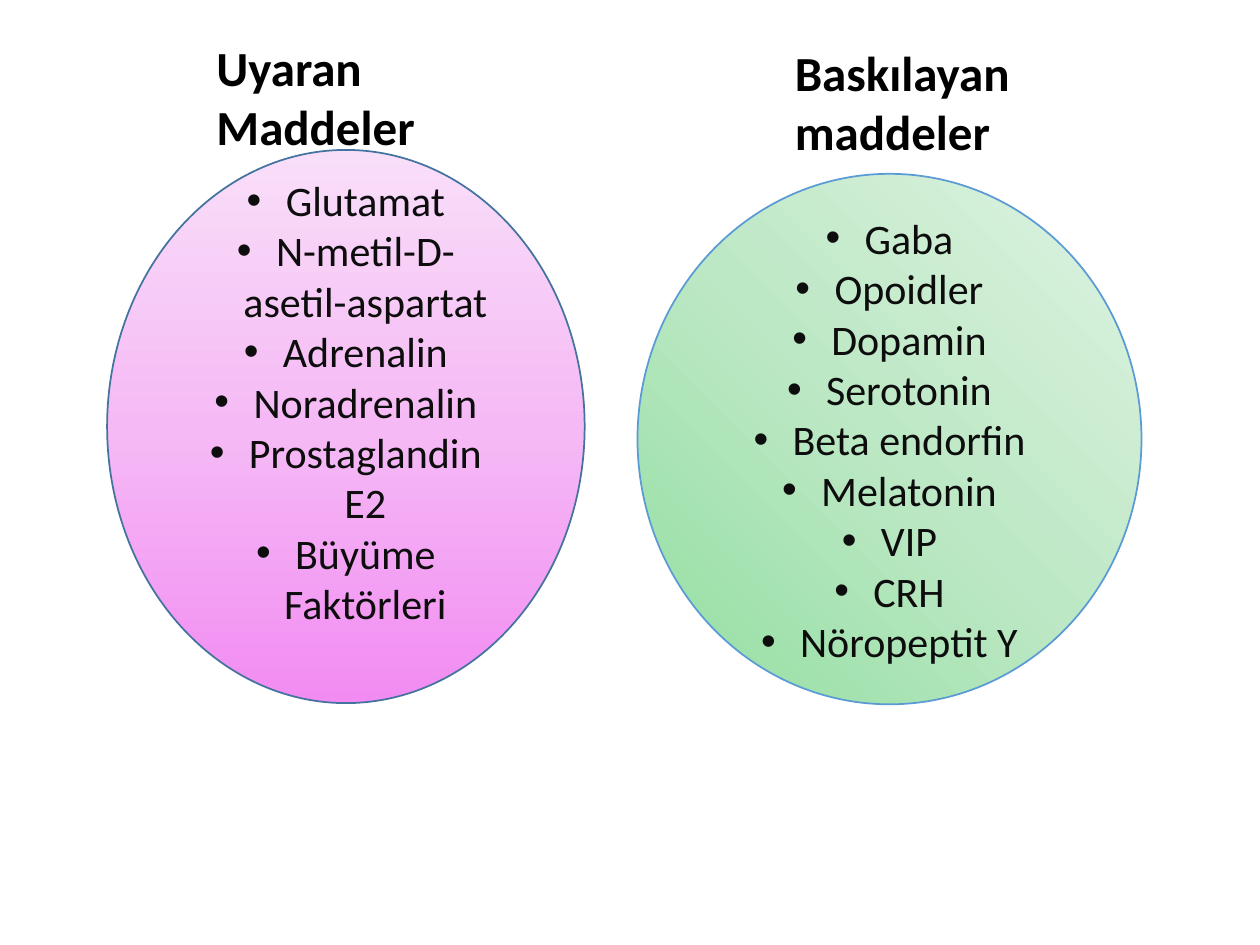
from copy import deepcopy

from lxml import etree
from pptx import Presentation
from pptx.dml.color import RGBColor
from pptx.enum import shapes, text
from pptx.oxml.ns import qn
from pptx.util import Inches, Pt

COLOURS = {"heading": "000000", "item": "0D0D0D"}

# Places are left, top, width, height in inches.
GROUPS = [
    {
        "heading": "Uyaran Maddeler",
        "heading_at": (1.62, 0.25, 2.54, 1.04),
        "items": ["Glutamat", "N-metil-D- asetil-aspartat", "Adrenalin",
                  "Noradrenalin", "Prostaglandin E2", "Büyüme Faktörleri"],
        "oval_at": (0.85, 1.19, 3.79, 4.39),
        "gradient": ["F28CF2", "F5BAF5", "F9DEF9"],
        "angle": 90,
        "line": "43739E",
        "bottom_inset": 0.45,
    },
    {
        "heading": "Baskılayan maddeler",
        "heading_at": (6.21, 0.29, 2.59, 1.04),
        "items": ["Gaba", "Opoidler", "Dopamin", "Serotonin", "Beta endorfin",
                  "Melatonin", "VIP", "CRH", "Nöropeptit Y"],
        "oval_at": (5.06, 1.38, 4, 4.21),
        "gradient": ["91DEA0", "BDE8C5", "DFF3E3"],
        "angle": 45,
        "line": "5B9BD5",
        "bottom_inset": 0.05,
    },
]


def write(para, words, colour, **formats):
    span = para.add_run()
    span.text = words
    span.font.color.rgb = RGBColor.from_string(colour)
    for name, value in {"name": "Calibri", **formats}.items():
        setattr(span.font, name, value)


def add_bullet(para, indent=0.31):
    properties = para._p.get_or_add_pPr()
    properties.set("marL", str(Inches(indent)))
    properties.set("indent", str(-Inches(indent)))
    etree.SubElement(properties, qn("a:buFont"), typeface="Arial")
    etree.SubElement(properties, qn("a:buChar"), char="•")


def fill_gradient(fill, colours, angle):
    """Spread the colours evenly; the angle runs counter-clockwise."""
    fill.gradient()
    fill.gradient_angle = angle
    stops = fill._fill._gradFill.find(qn("a:gsLst"))
    while len(stops) < len(colours):
        stops.append(deepcopy(stops[0]))
    for index, (stop, colour) in enumerate(zip(fill.gradient_stops, colours)):
        stop.position = index / (len(colours) - 1)
        stop.color.rgb = RGBColor.from_string(colour)


def add_oval(page, group):
    oval = page.shapes.add_shape(shapes.MSO_SHAPE.OVAL, *map(Inches, group["oval_at"]))
    oval.shadow.inherit = False
    fill_gradient(oval.fill, group["gradient"], group["angle"])
    oval.line.color.rgb = RGBColor.from_string(group["line"])
    oval.line.width = Pt(1)
    frame = oval.text_frame
    frame.word_wrap = True
    frame.vertical_anchor = text.MSO_ANCHOR.MIDDLE
    frame.margin_bottom = Inches(group["bottom_inset"])
    for index, item in enumerate(group["items"]):
        para = frame.add_paragraph() if index else frame.paragraphs[0]
        para.alignment = text.PP_ALIGN.CENTER
        add_bullet(para)
        write(para, item, COLOURS["item"], size=Pt(24))


def add_heading(page, group):
    box = page.shapes.add_textbox(*map(Inches, group["heading_at"]))
    box.text_frame.word_wrap = True
    box.text_frame.auto_size = text.MSO_AUTO_SIZE.SHAPE_TO_FIT_TEXT
    write(box.text_frame.paragraphs[0], group["heading"], COLOURS["heading"],
          size=Pt(28), bold=True)


def main():
    deck = Presentation()
    deck.slide_width, deck.slide_height = Inches(10), Inches(7.5)
    page = deck.slides.add_slide(deck.slide_layouts.get_by_name("Blank"))
    for add_part in (add_oval, add_heading):
        for group in GROUPS:
            add_part(page, group)
    deck.save("out.pptx")


if __name__ == "__main__":
    main()
